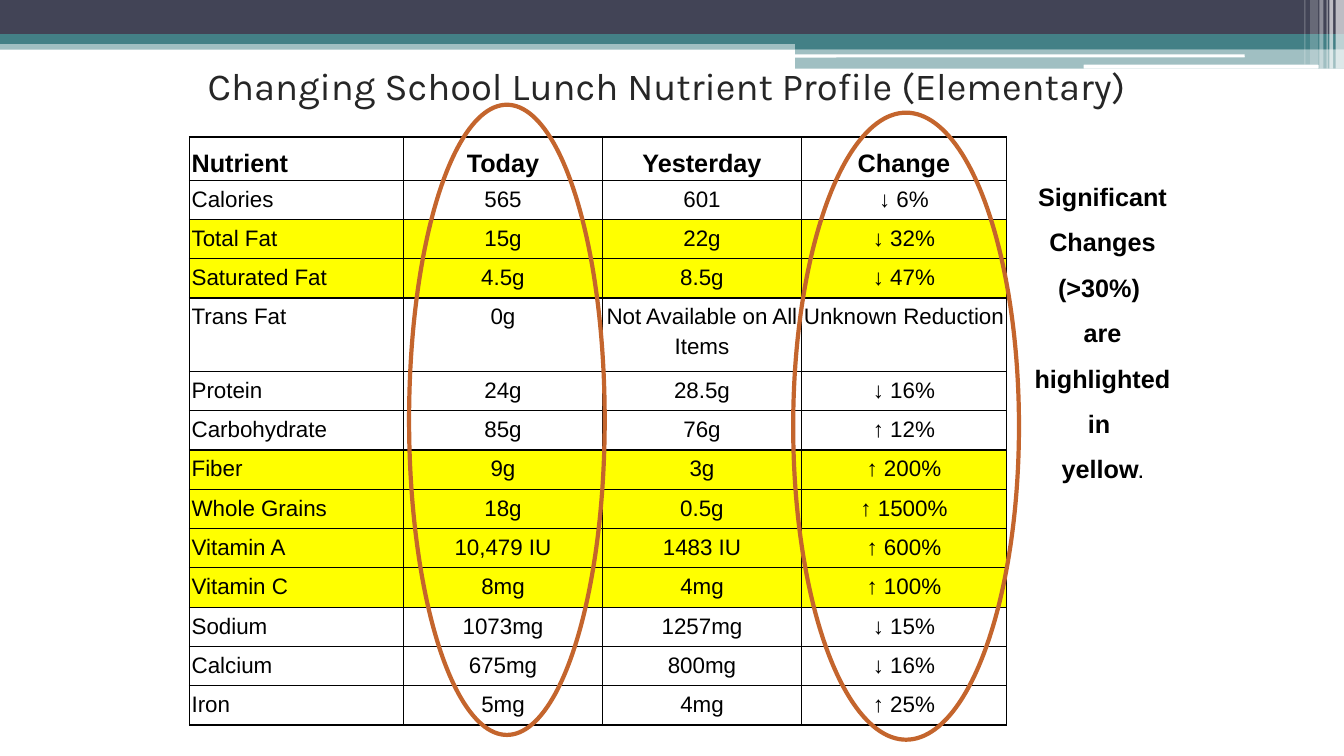
import dataclasses

import lxml.etree
import pptx
import pptx.dml.color
import pptx.enum.shapes
import pptx.enum.text
import pptx.oxml.ns
import pptx.util

Cm = pptx.util.Cm
Pt = pptx.util.Pt
qn = pptx.oxml.ns.qn
Form = pptx.enum.shapes.MSO_SHAPE
Align = pptx.enum.text.PP_ALIGN
Anchor = pptx.enum.text.MSO_ANCHOR


@dataclasses.dataclass(frozen=True)
class Theme:
    ink: str = "000000"
    gray: str = "262626"
    navy: str = "424456"
    teal: str = "438086"
    white: str = "FFFFFF"
    mark: str = "FFFF00"
    ring: str = "C4652D"
    body: str = "Arial"
    head: str = "Karla"
    title: float = 27.3
    large: float = 18
    cell: float = 16
    small: float = 12


def tint(code):
    return pptx.dml.color.RGBColor.from_string(code)


def apply(target, form):
    for name, value in form.items():
        setattr(target, name, value)


class Deck:
    """Hold the theme and current slide, and draw each kind of element."""

    def __init__(self, theme, width, height):
        self.theme = theme
        self.show = pptx.Presentation()
        apply(self.show, {"slide_width": Cm(width), "slide_height": Cm(height)})
        self.slide = self.show.slides.add_slide(self.show.slide_layouts[6])

    def shape(self, kind, box):
        shape = self.slide.shapes.add_shape(kind, *map(Cm, box))
        shape.shadow.inherit = False
        return shape

    def bar(self, box, color, alpha=100, kind=Form.RECTANGLE):
        bar = self.shape(kind, box)
        bar.fill.solid()
        bar.fill.fore_color.rgb = tint(color)
        bar.line.fill.background()
        if alpha < 100:
            node = bar.element.spPr.find(".//" + qn("a:srgbClr"))
            lxml.etree.SubElement(node, qn("a:alpha"), val=str(alpha * 1000))

    def ring(self, box):
        ring = self.shape(Form.OVAL, box)
        ring.fill.background()
        ring.line.color.rgb = tint(self.theme.ring)
        ring.line.width = Pt(3)

    def words(self, para, runs, color, face, form):
        apply(para, form)
        for text, size, bold in runs:
            run = para.add_run()
            run.text = text
            apply(run.font, {"size": Pt(size), "bold": bold, "name": face})
            run.font.color.rgb = tint(color)

    def text(self, box, paras, color, face, form, frame):
        area = self.slide.shapes.add_textbox(*map(Cm, box)).text_frame
        apply(area, {"word_wrap": True, **frame})
        for index, runs in enumerate(paras):
            para = area.add_paragraph() if index else area.paragraphs[0]
            self.words(para, runs, color, face, form)

    def edge(self, cell, side, width):
        line = lxml.etree.SubElement(
            cell._tc.get_or_add_tcPr(), qn("a:ln" + side), w=str(Pt(width)))
        fill = lxml.etree.SubElement(line, qn("a:solidFill"))
        lxml.etree.SubElement(fill, qn("a:srgbClr"), val=self.theme.ink)

    def table(self, spot, cols, rows, data):
        grid = self.slide.shapes.add_table(
            len(rows), len(cols), *map(Cm, (*spot, sum(cols), sum(rows)))).table
        apply(grid, {"first_row": False, "horz_banding": False})
        for col, width in zip(grid.columns, cols):
            col.width = Cm(width)
        for row, height in zip(grid.rows, rows):
            row.height = Cm(height)
        last = len(rows) - 1
        for r, line in enumerate(data):
            share = line[-1].strip("↓↑ %")
            for c, text in enumerate(line):
                cell = grid.cell(r, c)
                apply(cell, {"vertical_anchor": Anchor.TOP if r else Anchor.BOTTOM,
                             **pads(0.05, 0.05)})
                size = self.theme.cell if r else self.theme.large
                form = {"alignment": Align.CENTER if c else Align.LEFT,
                        "line_spacing": 1.19}
                self.words(cell.text_frame.paragraphs[0], [(text, size, r == 0)],
                           self.theme.ink, self.theme.body, form)
                outer = {"L": c == 0, "R": False, "T": r == 0, "B": r == last}
                for side, thick in outer.items():
                    self.edge(cell, side, 1.25 if thick else 1)
                if share.isdigit() and int(share) > 30:
                    cell.fill.solid()
                    cell.fill.fore_color.rgb = tint(self.theme.mark)
                else:
                    cell.fill.background()


def pads(side, end):
    return {"margin_left": Cm(side), "margin_right": Cm(side),
            "margin_top": Cm(end), "margin_bottom": Cm(end)}


DATA = [
    ("Nutrient", "Today", "Yesterday", "Change"),
    ("Calories", "565", "601", "↓ 6%"),
    ("Total Fat", "15g", "22g", "↓ 32%"),
    ("Saturated Fat", "4.5g", "8.5g", "↓ 47%"),
    ("Trans Fat", "0g", "Not Available on All Items", "Unknown Reduction"),
    ("Protein", "24g", "28.5g", "↓ 16%"),
    ("Carbohydrate", "85g", "76g", "↑ 12%"),
    ("Fiber", "9g", "3g", "↑ 200%"),
    ("Whole Grains", "18g", "0.5g", "↑ 1500%"),
    ("Vitamin A", "10,479 IU", "1483 IU", "↑ 600%"),
    ("Vitamin C", "8mg", "4mg", "↑ 100%"),
    ("Sodium", "1073mg", "1257mg", "↓ 15%"),
    ("Calcium", "675mg", "800mg", "↓ 16%"),
    ("Iron", "5mg", "4mg", "↑ 25%"),
]


def main():
    theme = Theme()
    wide = 33.87
    deck = Deck(theme, wide, 19.05)

    for box, color, alpha in [
        ((0, 1.02, wide, 0.23), theme.teal, 50),
        ((0, 0, wide, 0.86), theme.navy, 100),
        ((0, 0.86, wide, 0.25), theme.teal, 100),
        ((20.04, 0.99, 13.83, 0.25), theme.teal, 100),
        ((20.04, 1.22, 13.83, 0.51), theme.teal, 50),
    ]:
        deck.bar(box, color, alpha)
    for box in [(20.02, 1.37, 11.35, 0.08), (27.31, 1.63, 5.92, 0.1)]:
        deck.bar(box, theme.white, kind=Form.ROUNDED_RECTANGLE)
    for left, width, height, alpha in [
        (33.66, 0.21, 1.73, 65), (33.5, 0.1, 1.73, 65), (33.43, 0.03, 1.73, 60),
        (33.25, 0.1, 1.73, 40), (33.02, 0.2, 1.63, 20), (32.87, 0.03, 1.63, 30),
    ]:
        deck.bar((left, 0, width, height), theme.white, alpha)

    rows = [1.09] + [0.99] * 3 + [1.85] + [0.99] * 9
    deck.table((4.78, 3.45), (5.38, 5.03, 5.0, 5.18), rows, DATA)

    note = [
        [("Significant Changes (>30%) ", theme.large, True)],
        [("are highlighted in ", theme.large, True)],
        [("yellow", theme.large, True), (".", theme.small, True)],
    ]
    deck.text((25.93, 4.11, 3.71, 8.05), note, theme.ink, theme.body,
              {"alignment": Align.CENTER, "line_spacing": 1.5}, pads(0.08, 0.08))
    title = "Changing School Lunch Nutrient Profile (Elementary)"
    deck.text((4.24, 1.27, 25.12, 1.75), [[(title, theme.title, False)]],
              theme.gray, theme.head, {"alignment": Align.CENTER},
              {"vertical_anchor": Anchor.MIDDLE, **pads(0.18, 0.1)})

    for box in [(10.31, 2.64, 4.93, 15.88), (19.99, 2.84, 5.69, 15.8)]:
        deck.ring(box)
    deck.show.save("out.pptx")


if __name__ == "__main__":
    main()
